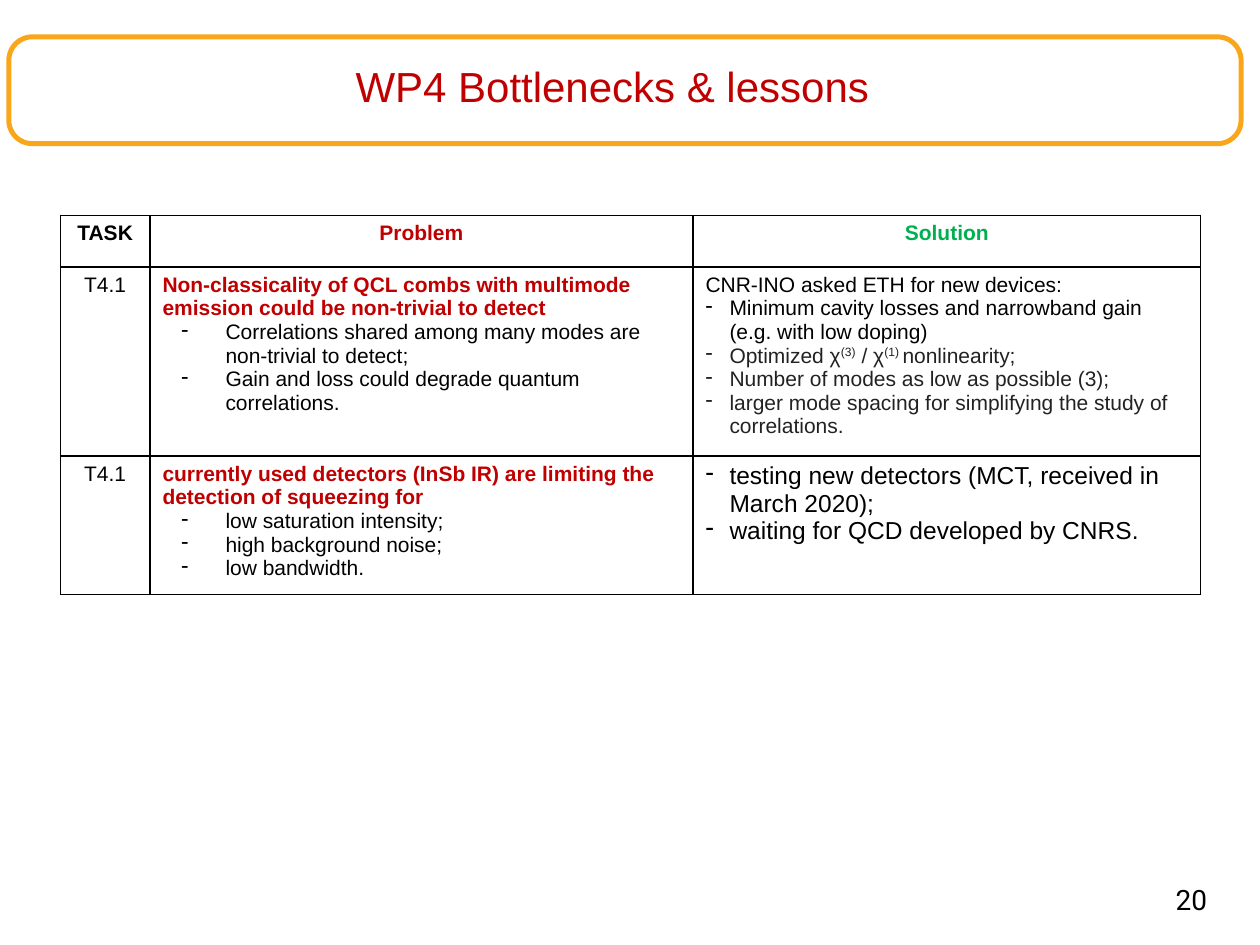
from dataclasses import dataclass

from lxml import etree
from pptx import Presentation
from pptx import util as u
from pptx.dml.color import RGBColor
from pptx.enum import shapes, text
from pptx.oxml.ns import qn


@dataclass(frozen=True)
class Theme:
    face: str = "Arial"
    digit: str = "Roboto"
    black: str = "000000"
    grey: str = "222222"
    red: str = "C00000"
    green: str = "00B050"
    gold: str = "FAA61A"
    head: int = 24
    page: int = 16
    large: int = 14
    body: int = 12


T = Theme()
WIDTH, HEIGHT = u.Inches(10), u.Inches(7.5)
COLS = (0.71, 4.31, 4.03)
ROWS = (0.41, 1.5, 1.1)
WIDE, SLIM = (0.5, -0.35), (0.19, -0.19)  # left margin and hanging indent
MID = text.PP_ALIGN.CENTER


def area(x, y, w, h):
    """Turn shares of the slide into a position and size."""
    return [int(v) for v in (x * WIDTH, y * HEIGHT, w * WIDTH, h * HEIGHT)]


def style(para, color=T.black, size=T.body, bold=False, face=T.face, align=None):
    font = para.font
    font.name, font.size, font.bold = face, u.Pt(size), bold
    font.color.rgb = RGBColor.from_string(color)
    if align is not None:
        para.alignment = align


def dash(para, indent):
    """Give a paragraph a hanging dash."""
    props = para._p.get_or_add_pPr()
    for key, value in zip(("marL", "indent"), indent):
        props.set(key, str(u.Inches(value)))
    etree.SubElement(props, qn("a:buChar")).set("char", "-")


def write(para, parts):
    """Add text; every second part of a tuple is raised."""
    for i, part in enumerate((parts,) if isinstance(parts, str) else parts):
        run = para.add_run()
        run.text = part
        if i % 2:
            run._r.get_or_add_rPr().set("baseline", "30000")


def edge(cell):
    """Leave the cell unfilled, with a thin black line on each side."""
    cell.fill.background()
    props = cell._tc.get_or_add_tcPr()
    for i, side in enumerate("LRTB"):
        line = etree.Element(qn(f"a:ln{side}"), w=str(u.Pt(1)))
        fill = etree.SubElement(line, qn("a:solidFill"))
        etree.SubElement(fill, qn("a:srgbClr")).set("val", T.black)
        props.insert(i, line)


def fill_cell(cell, lines):
    edge(cell)
    frame = cell.text_frame
    for i, (parts, indent, look) in enumerate(lines):
        para = frame.add_paragraph() if i else frame.paragraphs[0]
        if indent:
            dash(para, indent)
        style(para, **look)
        write(para, parts)


def line(parts, indent=None, **look):
    return parts, indent, look


def label(words, color=T.black, bold=False):
    return [line(words, color=color, bold=bold, align=MID)]


def problem(lead, *points):
    return [line(lead, color=T.red, bold=True)] + [line(p, WIDE) for p in points]


def points(*items, **look):
    return [line(item, SLIM, **look) for item in items]


def add_frame(slide):
    box = slide.shapes.add_shape(
        shapes.MSO_SHAPE.ROUNDED_RECTANGLE, *area(0.007, 0.039, 0.978, 0.113))
    box.adjustments[0] = 0.22
    box.shadow.inherit = False
    box.fill.background()
    box.line.color.rgb = RGBColor.from_string(T.gold)
    box.line.width = u.Pt(2.83)
    # Keep the frame behind the title
    slide.shapes._spTree.insert(2, box._element)


def add_title(slide, words):
    title = slide.shapes.title
    title.left, title.top, title.width, title.height = area(0.175, 0.07, 0.622, 0.049)
    frame = title.text_frame
    frame.margin_left = frame.margin_right = frame.margin_top = frame.margin_bottom = 0
    frame.vertical_anchor = text.MSO_ANCHOR.MIDDLE
    para = frame.paragraphs[0]
    para.line_spacing = 0.9
    style(para, T.red, T.head, align=MID)
    write(para, words)


def add_grid(slide, rows):
    spot = area(0.048, 0.228, sum(COLS) / 10, sum(ROWS) / 7.5)
    table = slide.shapes.add_table(len(ROWS), len(COLS), *spot).table
    table.first_row = table.horz_banding = False
    for col, width in zip(table.columns, COLS):
        col.width = u.Inches(width)
    for row, height, cells in zip(table.rows, ROWS, rows):
        row.height = u.Inches(height)
        for cell, lines in zip(row.cells, cells):
            fill_cell(cell, lines)


def add_page(slide, number):
    frame = slide.shapes.add_textbox(*area(0.73, 0.927, 0.233, 0.053)).text_frame
    frame.word_wrap = True
    frame.margin_left = frame.margin_right = u.Inches(0.05)
    para = frame.paragraphs[0]
    style(para, size=T.page, face=T.digit, align=text.PP_ALIGN.RIGHT)
    write(para, number)


def main():
    deck = Presentation()
    deck.slide_width, deck.slide_height = WIDTH, HEIGHT
    slide = deck.slides.add_slide(deck.slide_layouts[5])

    # Heading
    add_frame(slide)
    add_title(slide, "WP4 Bottlenecks & lessons")

    # Problems and solutions by task
    add_grid(slide, [
        [label("TASK", bold=True), label("Problem", T.red, True),
         label("Solution", T.green, True)],
        [label("T4.1"),
         problem("Non-classicality of QCL combs with multimode emission "
                 "could be non-trivial to detect",
                 "Correlations shared among many modes are non-trivial to detect;",
                 "Gain and loss could degrade quantum correlations."),
         [line("CNR-INO asked ETH for new devices:"),
          *points("Minimum cavity losses and narrowband gain (e.g. with low doping)"),
          *points(("Optimized χ", "(3)", " / χ", "(1) ", "nonlinearity;"),
                  "Number of modes as low as possible (3);",
                  "larger mode spacing for simplifying the study of correlations.",
                  color=T.grey)]],
        [label("T4.1"),
         problem("currently used detectors (InSb IR) are limiting the "
                 "detection of squeezing for",
                 "low saturation intensity;", "high background noise;",
                 "low bandwidth."),
         points("testing new detectors (MCT, received in March 2020);",
                "waiting for QCD developed by CNRS.", size=T.large)],
    ])

    # Page number
    add_page(slide, "20")
    deck.save("out.pptx")


if __name__ == "__main__":
    main()
